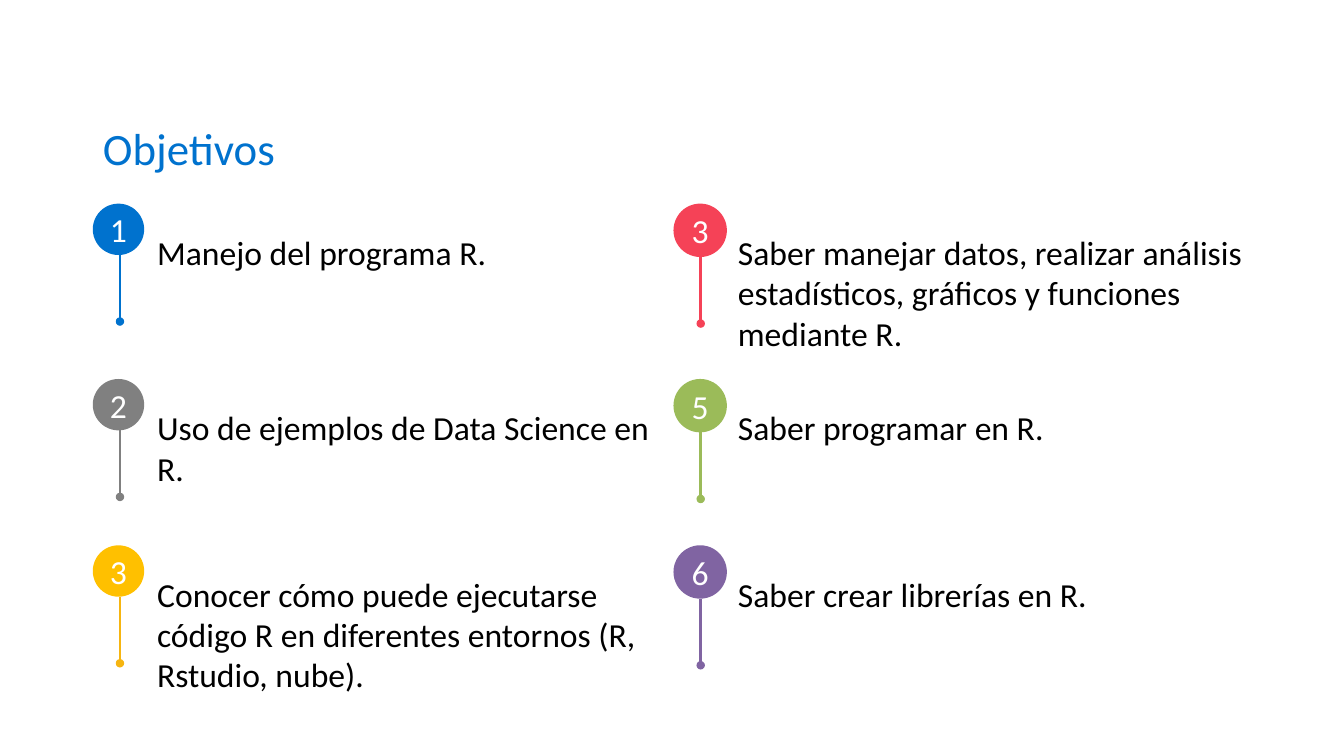
import pptx
import pptx.dml.color
import pptx.enum.shapes
import pptx.enum.text
import pptx.oxml.ns
import pptx.util
from lxml import etree

RGBColor = pptx.dml.color.RGBColor
MSO_ANCHOR = pptx.enum.text.MSO_ANCHOR
PP_ALIGN = pptx.enum.text.PP_ALIGN
Inches = pptx.util.Inches

BLUE = RGBColor(0x00, 0x72, 0xCE)
GRAY = RGBColor(0x80, 0x80, 0x80)
YELLOW = RGBColor(0xFF, 0xC0, 0x00)
AMBER = RGBColor(0xF6, 0xB5, 0x11)
RED = RGBColor(0xF5, 0x42, 0x57)
GREEN = RGBColor(0x9B, 0xBB, 0x59)
PURPLE = RGBColor(0x80, 0x64, 0xA2)
WHITE = RGBColor(0xFF, 0xFF, 0xFF)
BLACK = RGBColor(0x00, 0x00, 0x00)

COLUMNS = [(0.92, 0.51, 5.18), (6.68, 0.53, 5.35)]
ROWS = [2.02, 3.76, 5.41]
STEM_LENGTH = 0.66
TEXT_DROP = 0.23
GOALS = [
    [("1", "Manejo del programa R.", BLUE, BLUE),
     ("2", "Uso de ejemplos de Data Science en R.", GRAY, GRAY),
     ("3", "Conocer cómo puede ejecutarse código R en diferentes entornos (R, Rstudio, nube).",
      YELLOW, AMBER)],
    [("3", "Saber manejar datos, realizar análisis estadísticos, gráficos y funciones mediante R.",
      RED, RED),
     ("5", "Saber programar en R.", GREEN, GREEN),
     ("6", "Saber crear librerías en R.", PURPLE, PURPLE)],
]


def write(sp, text, size=24, color=BLACK, align=PP_ALIGN.LEFT, anchor=MSO_ANCHOR.TOP, wrap=True):
    """Put formatted text into a shape."""
    tf = sp.text_frame
    tf.word_wrap = wrap
    tf.vertical_anchor = anchor
    tf.auto_size = pptx.enum.text.MSO_AUTO_SIZE.NONE
    p = tf.paragraphs[0]
    p.alignment = align
    r = p.add_run()
    r.text = text
    r.font.name = "Calibri"
    r.font.size = pptx.util.Pt(size)
    r.font.color.rgb = color


def add_title(s, text):
    """Place and fill the title placeholder."""
    sp = s.shapes.title
    sp.left, sp.top, sp.width, sp.height = map(Inches, (0.92, 1.15, 8.59, 0.64))
    write(sp, text, size=32, color=BLUE)


def add_badge(s, x, y, diameter, number, color):
    """Draw a numbered circle."""
    sp = s.shapes.add_shape(pptx.enum.shapes.MSO_SHAPE.OVAL, Inches(x), Inches(y),
                            Inches(diameter), Inches(diameter))
    sp.shadow.inherit = False
    sp.fill.solid()
    sp.fill.fore_color.rgb = color
    sp.line.fill.background()
    tf = sp.text_frame
    tf.margin_left = tf.margin_right = tf.margin_top = tf.margin_bottom = 0
    write(sp, number, color=WHITE, align=PP_ALIGN.CENTER, anchor=MSO_ANCHOR.MIDDLE, wrap=False)


def add_stem(s, x, top, color):
    """Draw a vertical line with a dot at its lower end."""
    sp = s.shapes.add_connector(pptx.enum.shapes.MSO_CONNECTOR.STRAIGHT, Inches(x),
                                Inches(top + STEM_LENGTH), Inches(x), Inches(top))
    sp.line.color.rgb = color
    sp.line.width = pptx.util.Pt(2)
    qn = pptx.oxml.ns.qn
    etree.SubElement(sp.line._get_or_add_ln(), qn("a:headEnd"), type="oval")
    etree.SubElement(sp._element.spPr, qn("a:effectLst"))


def add_goal(s, column, y, goal):
    """Draw one objective: badge, stem and text."""
    x, diameter, width = column
    number, text, fill, stem = goal
    add_badge(s, x, y, diameter, number, fill)
    add_stem(s, x + 0.27, y + diameter, stem)
    sp = s.shapes.add_textbox(Inches(x + 0.54), Inches(y + TEXT_DROP), Inches(width), Inches(1.31))
    write(sp, text)


def main():
    """Build and save the slide."""
    prs = pptx.Presentation()
    prs.slide_width = Inches(13.33)
    prs.slide_height = Inches(7.5)
    s = prs.slides.add_slide(prs.slide_layouts[5])
    add_title(s, "Objetivos")
    for column, goals in zip(COLUMNS, GOALS):
        for y, goal in zip(ROWS, goals):
            add_goal(s, column, y, goal)
    prs.save("out.pptx")


if __name__ == "__main__":
    main()
